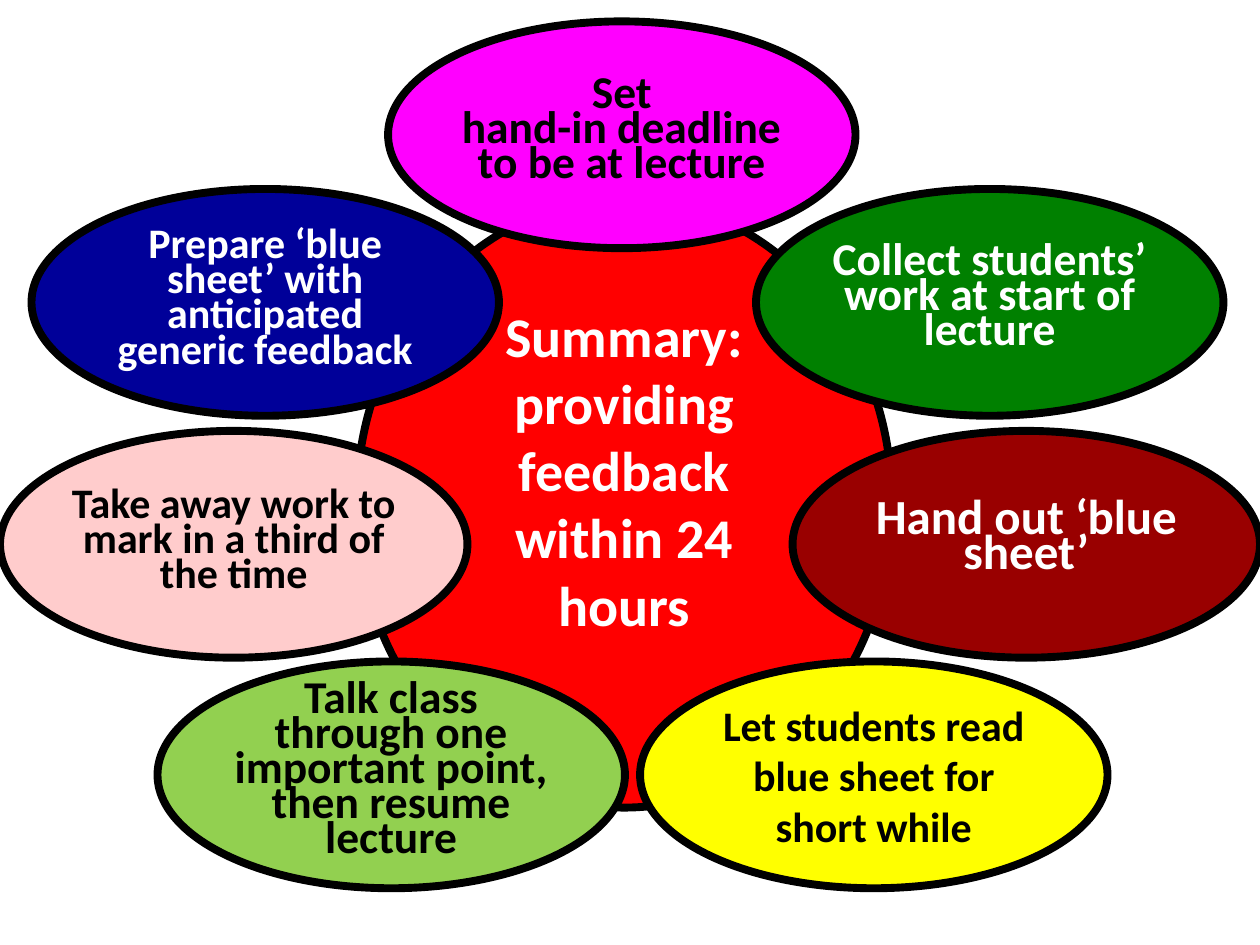
from pptx import Presentation
from pptx.dml.color import RGBColor
from pptx.enum.shapes import MSO_SHAPE as Shape
from pptx.enum.text import MSO_ANCHOR as Anchor, PP_ALIGN as Align
from pptx.util import Inches, Pt

BLACK, WHITE = "000000", "FFFFFF"
STEP_WIDTH, STEP_HEIGHT = 3.71, 1.8
TIGHT = 20  # line pitch in points

# left, top, fill, text colour, size, line pitch, paragraphs; back to front
STEPS = [
    (6.29, 3.42, "990000", WHITE, 28, TIGHT, ["Hand out ‘blue sheet’"]),
    (0.25, 1.5, "000099", WHITE, 24, TIGHT,
     ["Prepare ‘blue sheet’ with anticipated", "generic feedback"]),
    (6, 1.5, "008000", WHITE, 26, TIGHT,
     ["Collect students’ work at start of lecture"]),
    (0, 3.42, "FFCCCC", BLACK, 24, TIGHT,
     ["Take away work to mark in a third of the time"]),
    (3.08, 0.17, "FF00FF", BLACK, 26, TIGHT,
     ["Set", "hand-in deadline to be at lecture"]),
    (1.25, 5.25, "92D050", BLACK, 26, TIGHT,
     ["Talk class through one important point, then resume lecture"]),
    (5.08, 5.25, "FFFF00", BLACK, 24, None,
     ["Let students read blue sheet for short while"]),
]


def rgb(value):
    return RGBColor.from_string(value)


def add_oval(slide, left, top, width, height, fill):
    oval = slide.shapes.add_shape(Shape.OVAL, Inches(left), Inches(top),
                                  Inches(width), Inches(height))
    oval.shadow.inherit = False
    oval.fill.solid()
    oval.fill.fore_color.rgb = rgb(fill)
    oval.line.color.rgb = rgb(BLACK)
    oval.line.width = Pt(4.5)
    return oval


def write(oval, paragraphs, size, color, pitch=None, side=0, bottom=0):
    """Centre bold text in an oval; side and bottom are margins in inches."""
    frame = oval.text_frame
    frame.word_wrap = True
    frame.vertical_anchor = Anchor.MIDDLE
    frame.margin_left = frame.margin_right = Inches(side)
    frame.margin_top, frame.margin_bottom = 0, Inches(bottom)
    for index, text in enumerate(paragraphs):
        paragraph = frame.add_paragraph() if index else frame.paragraphs[0]
        paragraph.alignment = Align.CENTER
        if pitch:
            paragraph.line_spacing = Pt(pitch)
        run = paragraph.add_run()
        run.text = text
        run.font.name = "Calibri"
        run.font.size = Pt(size)
        run.font.bold = True
        run.font.color.rgb = rgb(color)


def add_summary(slide, left, top, width, height):
    hub = add_oval(slide, left, top, width, height, "FF0000")
    write(hub, ["Summary: providing feedback within 24 hours"], 32, WHITE,
          side=0.1, bottom=0.54)


def add_step(slide, left, top, fill, color, size, pitch, paragraphs):
    step = add_oval(slide, left, top, STEP_WIDTH, STEP_HEIGHT, fill)
    write(step, paragraphs, size, color, pitch)


def main():
    prs = Presentation()
    prs.slide_width, prs.slide_height = Inches(10), Inches(7.5)
    slide = prs.slides.add_slide(prs.slide_layouts.get_by_name("Blank"))
    add_summary(slide, 2.83, 1.58, 4.25, 4.83)
    for step in STEPS:
        add_step(slide, *step)
    prs.save("out.pptx")


if __name__ == "__main__":
    main()
